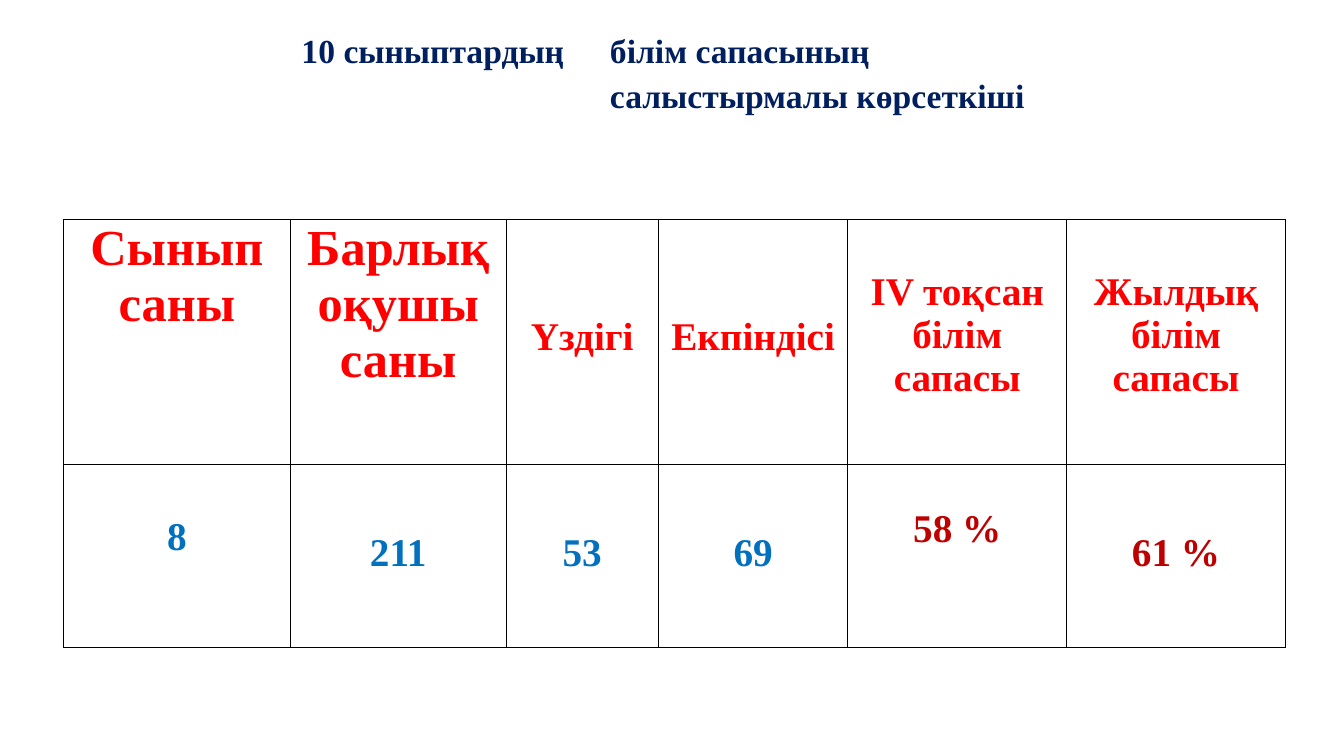
from lxml.etree import SubElement
from pptx import Presentation
from pptx.dml.color import RGBColor
from pptx.enum.text import MSO_ANCHOR, MSO_AUTO_SIZE, PP_ALIGN
from pptx.oxml import parse_xml
from pptx.oxml.ns import qn
from pptx.util import Inches, Pt

NAVY = RGBColor(0x00, 0x1F, 0x5F)
RED = RGBColor(0xFF, 0x00, 0x00)
BLUE = RGBColor(0x00, 0x70, 0xBF)
DARK = RGBColor(0xBF, 0x00, 0x00)
FACE = "Times New Roman"
NS = "http://schemas.openxmlformats.org/drawingml/2006/main"

# Content: each cell is text, size, colour and top margin
TITLE = "10 сыныптардың\tбілім сапасының салыстырмалы көрсеткіші"
HEAD = [
    ("Сынып саны", 36, RED, 0.01),
    ("Барлық оқушы саны", 36, RED, 0.01),
    ("Үздігі", 28, RED, 0.95),
    ("Екпіндісі", 28, RED, 0.95),
    ("IV тоқсан білім сапасы", 28, RED, 0.5),
    ("Жылдық білім сапасы", 28, RED, 0.5),
]
DATA = [
    ("8", 28, BLUE, 0.5),
    ("211", 28, BLUE, 0.66),
    ("53", 28, BLUE, 0.66),
    ("69", 28, BLUE, 0.66),
    ("58 %", 28, DARK, 0.43),
    ("61 %", 28, DARK, 0.66),
]
ROWS = [HEAD, DATA]
WIDTHS = [2.25, 2.14, 1.51, 1.88, 2.17, 2.17]
HEIGHTS = [2.43, 1.81]


def assign(item, values):
    for name, value in values.items():
        setattr(item, name, value)


def style(par, size, color):
    assign(par.font, {"name": FACE, "size": Pt(size), "bold": True})
    par.font.color.rgb = color


def border(cell):
    props = cell._tc.get_or_add_tcPr()
    for spot, side in enumerate("LRTB"):
        line = parse_xml(
            f'<a:ln{side} xmlns:a="{NS}" w="{Pt(1)}"><a:solidFill>'
            f'<a:srgbClr val="000000"/></a:solidFill></a:ln{side}>')
        props.insert(spot, line)


deck = Presentation()
assign(deck, {"slide_width": Inches(13.33), "slide_height": Inches(7.5)})
slide = deck.slides.add_slide(deck.slide_layouts[5])

# Title with a hanging indent and a tab
title = slide.shapes.title
assign(title, {"left": Inches(2.97), "top": Inches(0.25),
               "width": Inches(7.81), "height": Inches(0.83)})
frame = title.text_frame
frame.text = TITLE
assign(frame, {"margin_left": 0, "margin_right": 0, "margin_bottom": 0,
               "margin_top": Inches(0.01), "word_wrap": True,
               "vertical_anchor": MSO_ANCHOR.TOP,
               "auto_size": MSO_AUTO_SIZE.NONE})
par = frame.paragraphs[0]
assign(par, {"alignment": PP_ALIGN.LEFT, "line_spacing": 1.1})
style(par, 24, NAVY)
props = par._p.get_or_add_pPr()
props.set("marL", str(Inches(3.08)))
props.set("indent", str(Inches(-3.06)))
tabs = parse_xml(f'<a:tabLst xmlns:a="{NS}"/>')
SubElement(tabs, qn("a:tab"), pos=str(Inches(2.78)), algn="l")
props.find(qn("a:defRPr")).addprevious(tabs)

# Table
table = slide.shapes.add_table(
    len(ROWS), len(WIDTHS), Inches(0.63), Inches(2.18),
    Inches(sum(WIDTHS)), Inches(sum(HEIGHTS))).table
assign(table, {"first_row": False, "horz_banding": False})
for col, width in zip(table.columns, WIDTHS):
    col.width = Inches(width)
for row, height, items in zip(table.rows, HEIGHTS, ROWS):
    row.height = Inches(height)
    for cell, (text, size, color, top) in zip(row.cells, items):
        cell.text = text
        assign(cell, {"margin_left": 0, "margin_right": 0, "margin_bottom": 0,
                      "margin_top": Inches(top),
                      "vertical_anchor": MSO_ANCHOR.TOP})
        par = cell.text_frame.paragraphs[0]
        par.alignment = PP_ALIGN.CENTER
        style(par.runs[0], size, color)
        cell.fill.background()
        border(cell)

# Run-level font for the title
style(frame.paragraphs[0].runs[0], 24, NAVY)

deck.save("out.pptx")
